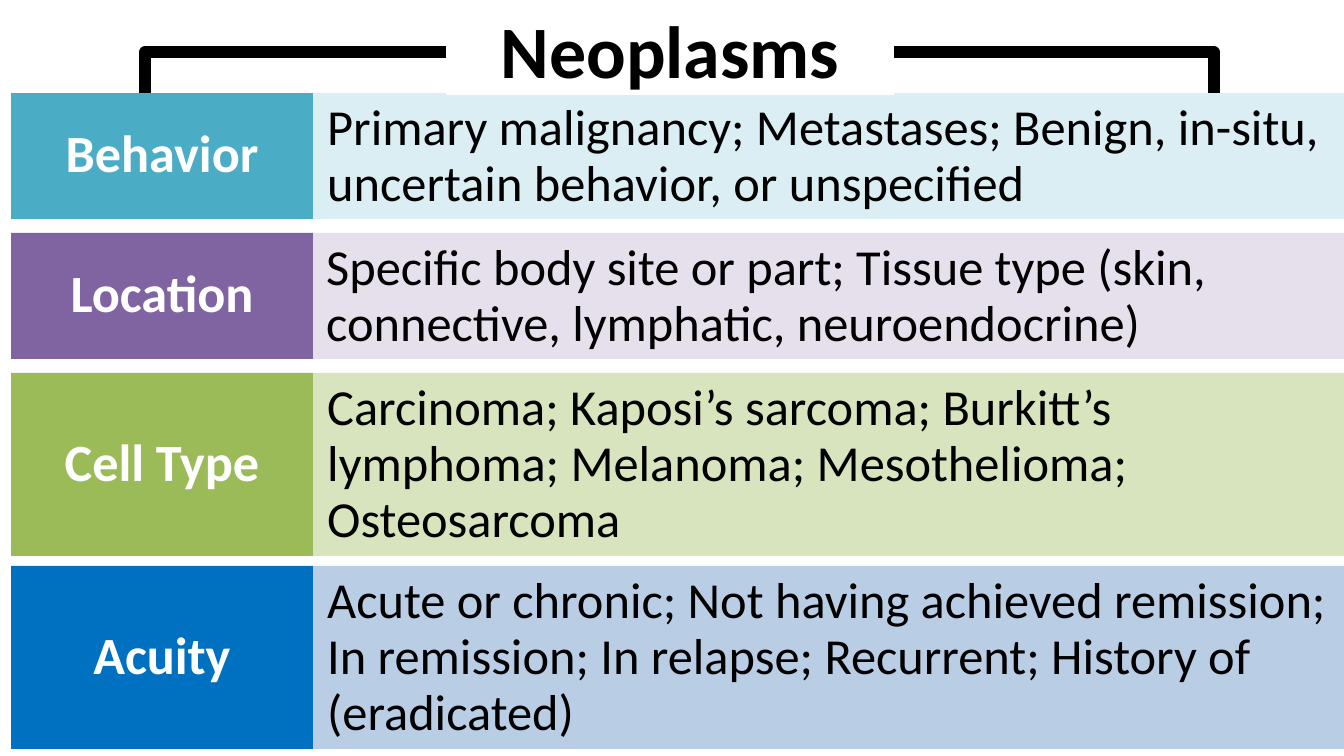
import pptx
import pptx.util
import pptx.dml.color
import pptx.enum.shapes
import pptx.enum.text

SCALE = 914400 / 134.4  # EMU in one px
ALIGN = pptx.enum.text.PP_ALIGN
ANCHOR = pptx.enum.text.MSO_ANCHOR


class Theme:
    font = "Calibri"
    black = "000000"
    white = "FFFFFF"
    title = 39.6
    label = 28
    body = 27
    pitch = 30
    frame = 6


# Label, text, top, height, label fill, body fill, indent
ROWS = [
    ("Behavior", "Primary malignancy; Metastases; Benign, in-situ, "
     "uncertain behavior, or unspecified", 93, 126, "4BACC6", "DBEEF4", 1),
    ("Location", "Specific body site or part; Tissue type (skin, "
     "connective, lymphatic, neuroendocrine)", 233, 126, "8064A2", "E6E0EC", 0),
    ("Cell Type", "Carcinoma; Kaposi’s sarcoma; Burkitt’s lymphoma; "
     "Melanoma; Mesothelioma; Osteosarcoma", 373, 183, "9BBB59", "D7E4BD", 1),
    ("Acuity", "Acute or chronic; Not having achieved remission; In remission; "
     "In relapse; Recurrent; History of (eradicated)",
     566, 183, "0070C0", "B9CDE5", 1),
]
LEFT, SPLIT, RIGHT = 11, 313, 1344


def px(num):
    return pptx.util.Emu(round(num * SCALE))


def color(code):
    return pptx.dml.color.RGBColor.from_string(code)


def add_box(slide, x, y, w, h, fill=None):
    """Rectangle with an optional fill and no line."""
    kind = pptx.enum.shapes.MSO_SHAPE.RECTANGLE
    box = slide.shapes.add_shape(kind, px(x), px(y), px(w), px(h))
    box.shadow.inherit = False
    box.line.fill.background()
    if fill:
        box.fill.solid()
        box.fill.fore_color.rgb = color(fill)
    else:
        box.fill.background()
    return box


def add_text(box, text, size, ink, bold=False, align=ALIGN.CENTER,
             anchor=ANCHOR.MIDDLE):
    """One run of text in the box; gives back its paragraph."""
    frame = box.text_frame
    frame.word_wrap = True
    frame.vertical_anchor = anchor
    para = frame.paragraphs[0]
    para.alignment = align
    run = para.add_run()
    run.text = text
    run.font.name = Theme.font
    run.font.size = pptx.util.Pt(size)
    run.font.bold = bold
    run.font.color.rgb = color(ink)
    return para


def add_frame(slide):
    box = add_box(slide, 145, 52, 1069, 146)
    box.line.color.rgb = color(Theme.black)
    box.line.width = pptx.util.Pt(Theme.frame)


def add_body(slide, text, y, h, fill, indent):
    box = add_box(slide, SPLIT, y, RIGHT - SPLIT, h, fill)
    para = add_text(box, text, Theme.body, Theme.black,
                    align=ALIGN.LEFT, anchor=ANCHOR.TOP)
    box.text_frame.auto_size = pptx.enum.text.MSO_AUTO_SIZE.SHAPE_TO_FIT_TEXT
    para.level = 1
    para.line_spacing = pptx.util.Pt(Theme.pitch)
    props = para._p.get_or_add_pPr()
    props.set("marL", str(px(indent)))
    props.set("indent", "0")


def add_label(slide, text, y, h, fill):
    box = add_box(slide, LEFT, y, SPLIT - LEFT, h, fill)
    para = add_text(box, text, Theme.label, Theme.white, bold=True)
    para.line_spacing = 0.9
    frame = box.text_frame
    frame.margin_left = frame.margin_right = px(21)
    frame.margin_top = frame.margin_bottom = px(12)


def main():
    deck = pptx.Presentation()
    deck.slide_width, deck.slide_height = px(1344), px(756)
    slide = deck.slides.add_slide(deck.slide_layouts[6])

    # Bracket behind the rows
    add_frame(slide)

    # Rows, from the last to the first
    for label, text, y, h, dark, light, indent in reversed(ROWS):
        add_body(slide, text, y, h, light, indent)
        add_label(slide, label, y, h, dark)

    # Title, over the bracket
    head = add_box(slide, 446, 3, 448, 92, Theme.white)
    add_text(head, "Neoplasms", Theme.title, Theme.black, bold=True)

    deck.save("out.pptx")


if __name__ == "__main__":
    main()
